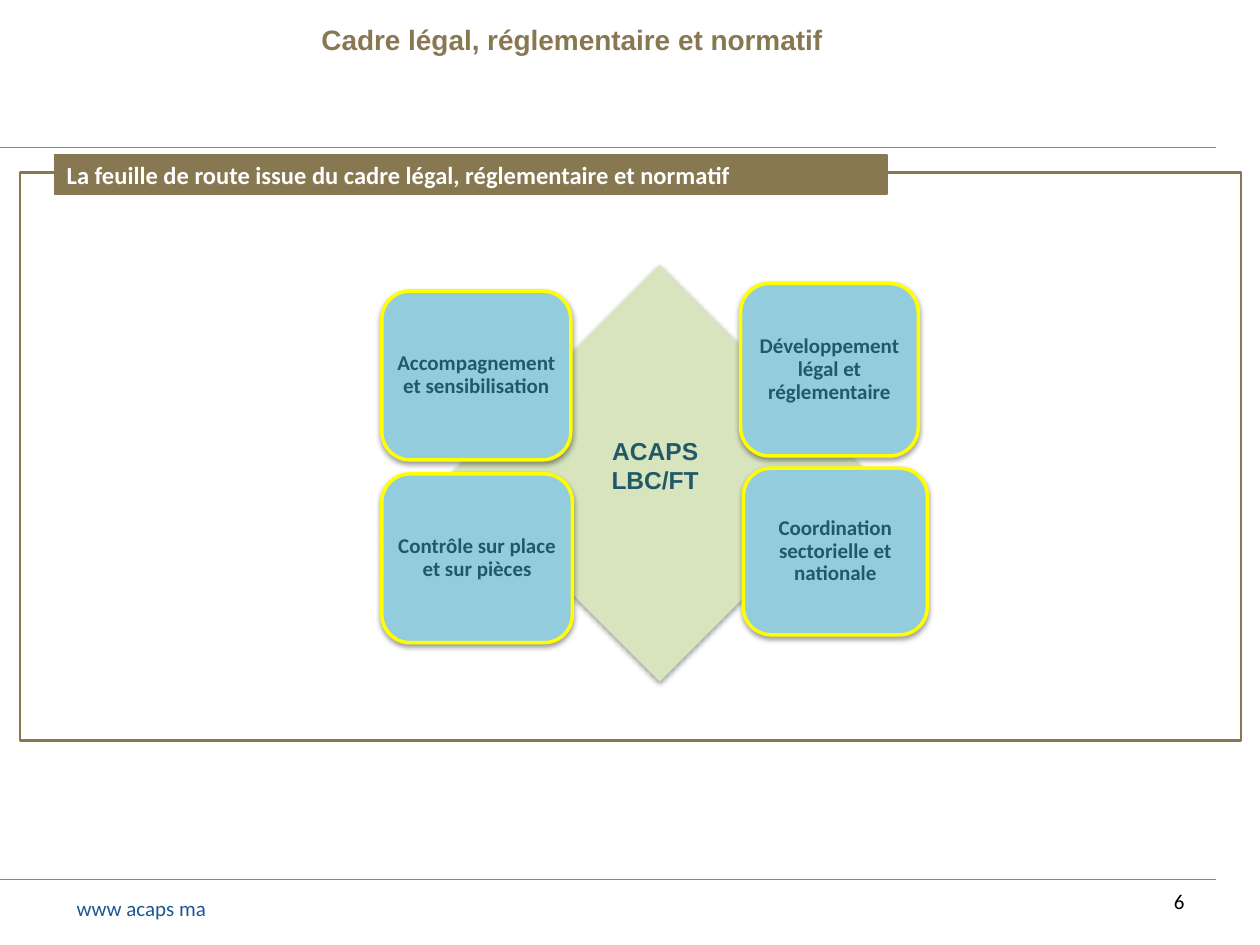
import pptx
import pptx.util
import pptx.oxml
import pptx.dml.color
import pptx.enum.shapes
import pptx.enum.text

Pt = pptx.util.Pt
SHAPE = pptx.enum.shapes.MSO_SHAPE
ALIGN = pptx.enum.text.PP_ALIGN
ANCHOR = pptx.enum.text.MSO_ANCHOR
A_NS = 'xmlns:a="http://schemas.openxmlformats.org/drawingml/2006/main"'

COLORS = {
    "bronze": "887852", "rule": "90876B", "white": "FFFFFF", "black": "000000",
    "link": "205595", "green": "D7E4BD", "sky": "93CDDD", "yellow": "FFFF00",
    "teal": "215968",
}

HEADING = "Cadre légal, réglementaire et normatif"
BANNER = "La feuille de route issue du cadre légal, réglementaire et normatif"
CENTER = ["ACAPS", "LBC/FT"]
SITE = "www acaps ma"
PAGE = "6"
PILLARS = [
    ("Accompagnement et sensibilisation", (218.2, 166.3, 108, 96.5)),
    ("Développement légal et réglementaire", (423.2, 162, 101.5, 98.6)),
    ("Contrôle sur place et sur pièces", (218.2, 270.8, 108.9, 96.5)),
    ("Coordination sectorielle et nationale", (424.8, 267.6, 105.1, 95.2)),
]
RULE_LEVELS = [84.24, 502.56]
RULE_END = 694.8


def rgb(name):
    return pptx.dml.color.RGBColor.from_string(COLORS[name])


def write(holder, lines, size, font, color, bold=False, align=ALIGN.LEFT,
          anchor=ANCHOR.TOP, insets=(7.2, 3.6, 7.2, 3.6), spacing=None):
    frame = holder.text_frame
    frame.word_wrap = True
    frame.auto_size = pptx.enum.text.MSO_AUTO_SIZE.NONE
    frame.vertical_anchor = anchor
    (frame.margin_left, frame.margin_top,
     frame.margin_right, frame.margin_bottom) = map(Pt, insets)
    frame.text = "\n".join(lines)
    for paragraph in frame.paragraphs:
        paragraph.alignment = align
        paragraph.line_spacing = spacing
        paragraph.font.size = Pt(size)
        paragraph.font.name = font
        paragraph.font.bold = bold
        paragraph.font.color.rgb = rgb(color)


def add_block(slide, kind, box, fill=None, line=None, width=0.75, shadow=False):
    block = slide.shapes.add_shape(kind, *map(Pt, box))
    block.shadow.inherit = False
    if fill:
        block.fill.solid()
        block.fill.fore_color.rgb = rgb(fill)
    else:
        block.fill.background()
    if line:
        block.line.color.rgb = rgb(line)
        block.line.width = Pt(width)
    else:
        block.line.fill.background()
    if shadow:
        effects = block._element.spPr.find(pptx.oxml.ns.qn("a:effectLst"))
        effects.append(pptx.oxml.parse_xml(
            f'<a:outerShdw {A_NS} blurRad="{Pt(3.1)}" dist="{Pt(1.6)}" '
            f'dir="5400000" rotWithShape="0"><a:srgbClr val="{COLORS["black"]}">'
            '<a:alpha val="38000"/></a:srgbClr></a:outerShdw>'))
    return block


def add_text(slide, box, *args, **options):
    write(slide.shapes.add_textbox(*map(Pt, box)), *args, **options)


def add_rule(slide, level):
    rule = slide.shapes.add_connector(
        pptx.enum.shapes.MSO_CONNECTOR.STRAIGHT,
        Pt(0), Pt(level), Pt(RULE_END), Pt(level))
    rule.line.color.rgb = rgb("rule")
    rule.line.width = Pt(0.75)
    rule._element.spPr.append(pptx.oxml.parse_xml(f"<a:effectLst {A_NS}/>"))


def main():
    deck = pptx.Presentation()
    deck.slide_width, deck.slide_height = Pt(720), Pt(540)
    slide = deck.slides.add_slide(deck.slide_layouts[5])

    heading = slide.shapes.title
    heading.left, heading.top, heading.width, heading.height = map(
        Pt, (97.2, 9.4, 459.4, 26.6))
    write(heading, [HEADING], 16, "Arial", "bronze", bold=True, align=ALIGN.CENTER)

    for level in RULE_LEVELS:
        add_rule(slide, level)
    add_text(slide, (36.7, 508.3, 113, 21.6), [SITE], 12, "Calibri", "link")
    add_text(slide, (516.2, 500.4, 167.8, 28.8), [PAGE], 12, "Calibri", "black",
             align=ALIGN.RIGHT, anchor=ANCHOR.MIDDLE)

    add_block(slide, SHAPE.RECTANGLE, (11.5, 98.6, 697.7, 324.7),
              line="bronze", width=1.5)
    banner = add_block(slide, SHAPE.RECTANGLE, (31, 88.6, 475.9, 22.3),
                       fill="bronze", line="bronze")
    write(banner, [BANNER], 14, "Calibri", "white", bold=True,
          anchor=ANCHOR.MIDDLE, insets=(7.2, 0, 0, 0))

    add_block(slide, SHAPE.DIAMOND, (257.8, 151.2, 238.3, 238.3),
              fill="green", shadow=True)
    for label, box in PILLARS:
        pillar = add_block(slide, SHAPE.ROUNDED_RECTANGLE, box, fill="sky",
                           line="yellow", width=2, shadow=True)
        write(pillar, [label], 12, "Calibri", "teal", bold=True,
              align=ALIGN.CENTER, anchor=ANCHOR.MIDDLE,
              insets=(3.6, 3.6, 3.6, 3.6), spacing=0.9)
    add_text(slide, (331.9, 245.5, 85, 41), CENTER, 14, "Arial", "teal",
             bold=True, align=ALIGN.CENTER)

    deck.save("out.pptx")


if __name__ == "__main__":
    main()
